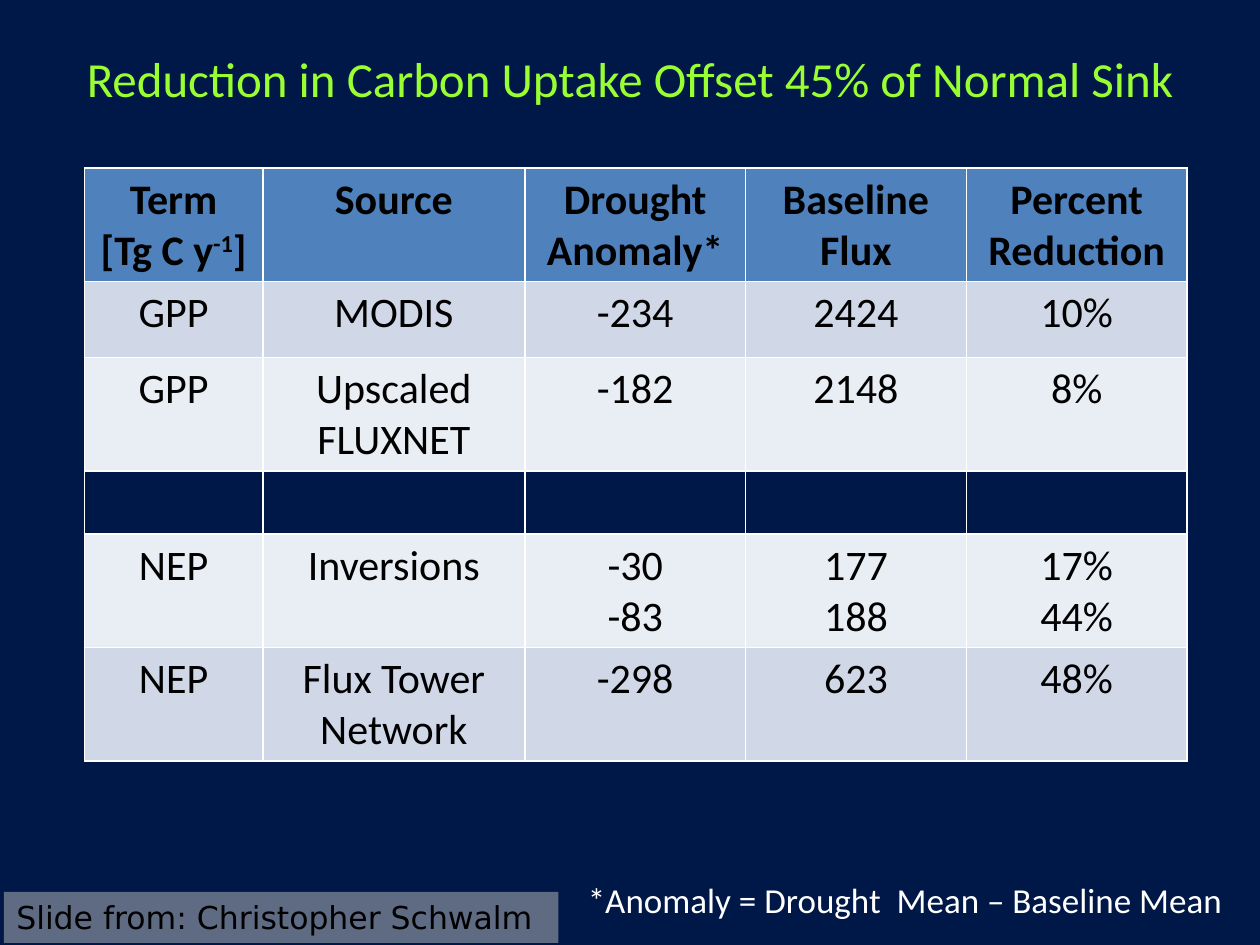
from lxml import etree
from pptx import Presentation
from pptx.dml.color import RGBColor
from pptx.enum.shapes import MSO_SHAPE
from pptx.enum.text import MSO_ANCHOR, PP_ALIGN
from pptx.oxml.ns import qn
from pptx.util import Cm, Pt

NAVY = RGBColor(0x00, 0x18, 0x48)
LIME = RGBColor(0x99, 0xFF, 0x33)
WHITE = RGBColor(0xFF, 0xFF, 0xFF)
BLACK = RGBColor(0x00, 0x00, 0x00)
GREY = RGBColor(0xBF, 0xBF, 0xBF)
HEADER_BLUE = RGBColor(0x4F, 0x81, 0xBD)
DARK_BAND = RGBColor(0xD0, 0xD8, 0xE8)
LIGHT_BAND = RGBColor(0xE9, 0xED, 0xF4)

COLUMN_WIDTHS = [3.6, 5.28, 4.45, 4.45, 4.45]
# Row height in cm, fill and cell texts; "^" encloses superscript
ROWS = [
    (2.28, HEADER_BLUE, ["Term\n[Tg C y^-1^]", "Source", "Drought Anomaly*",
                         "Baseline Flux", "Percent Reduction"]),
    (1.53, DARK_BAND, ["GPP", "MODIS", "-234", "2424", "10%"]),
    (2.28, LIGHT_BAND, ["GPP", "Upscaled FLUXNET", "-182", "2148", "8%"]),
    (1.27, None, [""] * 5),
    (2.28, LIGHT_BAND, ["NEP", "Inversions", "-30\n-83", "177\n188", "17%\n44%"]),
    (2.28, DARK_BAND, ["NEP", "Flux Tower Network", "-298", "623", "48%"]),
]


def write_text(frame, text, size=24, color=BLACK, font="Calibri", bold=False,
               align=PP_ALIGN.CENTER):
    """Fill a text frame; lines become paragraphs, ^...^ becomes superscript."""
    for number, line in enumerate(text.split("\n")):
        para = frame.paragraphs[0] if number == 0 else frame.add_paragraph()
        para.alignment = align
        for index, part in enumerate(line.split("^")):
            if not part:
                continue
            span = para.add_run()
            span.text = part
            span.font.size = Pt(size)
            span.font.name = font
            span.font.bold = bold
            span.font.color.rgb = color
            if index % 2:
                span.font._element.set("baseline", "30000")


def add_borders(cell, color=WHITE, width=1):
    properties = cell._tc.get_or_add_tcPr()
    for side in ("a:lnL", "a:lnR", "a:lnT", "a:lnB"):
        line = etree.SubElement(properties, qn(side), w=str(Pt(width)))
        fill = etree.SubElement(line, qn("a:solidFill"))
        etree.SubElement(fill, qn("a:srgbClr"), val=str(color))


def place_title(page, left, top, width, height):
    title = page.shapes.title
    title.left, title.top, title.width, title.height = left, top, width, height
    title.text_frame.word_wrap = True
    title.text_frame.vertical_anchor = MSO_ANCHOR.TOP
    write_text(title.text_frame,
               "Reduction in Carbon Uptake Offset 45% of Normal Sink",
               size=28, color=LIME)


def place_flux_table(page, left, top):
    width = Cm(sum(COLUMN_WIDTHS))
    height = Cm(sum(row[0] for row in ROWS))
    table = page.shapes.add_table(len(ROWS), len(COLUMN_WIDTHS),
                                  left, top, width, height).table
    table.horz_banding = False
    for column, column_width in zip(table.columns, COLUMN_WIDTHS):
        column.width = Cm(column_width)
    for row, (row_height, fill, texts) in zip(table.rows, ROWS):
        row.height = Cm(row_height)
        for cell, text in zip(row.cells, texts):
            add_borders(cell)
            if fill is None:
                cell.fill.background()
            else:
                cell.fill.solid()
                cell.fill.fore_color.rgb = fill
            write_text(cell.text_frame, text, bold=fill == HEADER_BLUE)


def place_footnote(page, left, top, width, height):
    box = page.shapes.add_textbox(left, top, width, height)
    box.text_frame.word_wrap = False
    write_text(box.text_frame, "*Anomaly = Drought  Mean – Baseline Mean",
               size=20, color=WHITE, align=PP_ALIGN.LEFT)


def place_credit(page, left, top, width, height):
    box = page.shapes.add_shape(MSO_SHAPE.RECTANGLE, left, top, width, height)
    box.shadow.inherit = False
    box.line.fill.background()
    box.fill.solid()
    box.fill.fore_color.rgb = GREY
    color = box._element.spPr.find(qn("a:solidFill")).find(qn("a:srgbClr"))
    etree.SubElement(color, qn("a:alpha"), val="50000")
    box.text_frame.word_wrap = False
    box.text_frame.vertical_anchor = MSO_ANCHOR.TOP
    write_text(box.text_frame, "Slide from: Christopher Schwalm", size=18,
               font="DejaVu Sans", align=PP_ALIGN.LEFT)


def main():
    deck = Presentation()
    deck.slide_width, deck.slide_height = Cm(25.4), Cm(19.05)
    page = deck.slides.add_slide(deck.slide_layouts[5])
    page.background.fill.solid()
    page.background.fill.fore_color.rgb = NAVY
    place_footnote(page, Cm(11.6), Cm(17.58), Cm(13.4), Cm(1.11))
    place_title(page, Cm(0.42), Cm(0.85), Cm(24.56), Cm(1.45))
    place_flux_table(page, Cm(1.7), Cm(3.39))
    place_credit(page, Cm(0.08), Cm(17.98), Cm(11.18), Cm(1.03))
    deck.save("out.pptx")


if __name__ == "__main__":
    main()
